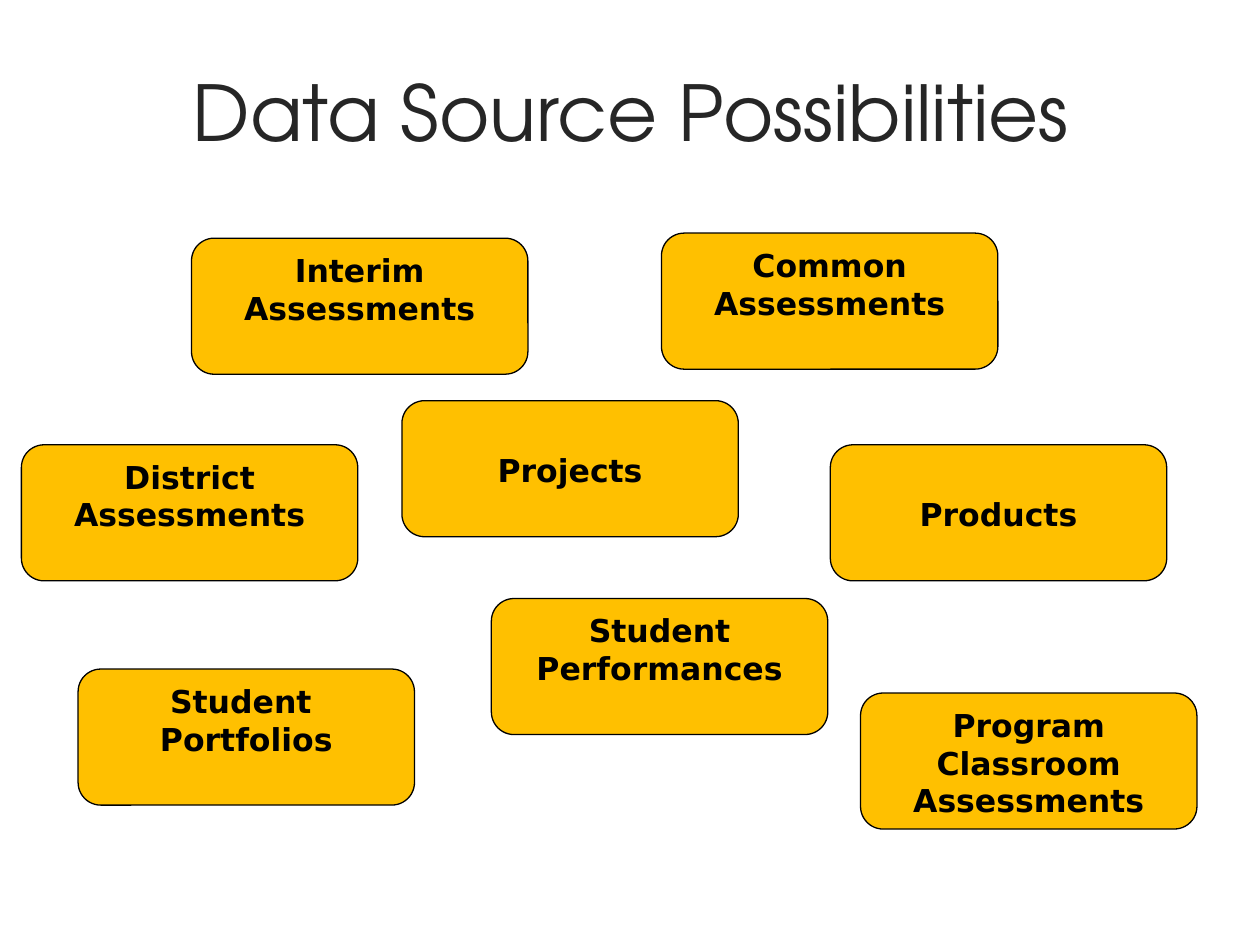
from pptx import Presentation
from pptx.dml.color import RGBColor
from pptx.enum.shapes import MSO_SHAPE
from pptx.enum.text import MSO_ANCHOR, PP_ALIGN
from pptx.util import Inches, Pt

CARD_WIDTH, CARD_HEIGHT = 2.67, 1.08
TOP_INSET, LOWERED_INSET = 0.05, 0.35

# Label, left, top, top inset
DATA_SOURCES = [
    ("Interim Assessments", 1.52, 1.89, TOP_INSET),
    ("Program Classroom Assessments", 6.83, 5.5, TOP_INSET),
    ("Projects", 3.19, 3.18, LOWERED_INSET),
    ("Products", 6.59, 3.53, LOWERED_INSET),
    ("Student \nPortfolios", 0.62, 5.31, TOP_INSET),
    ("Student Performances", 3.9, 4.75, TOP_INSET),
    ("Common Assessments", 5.25, 1.85, TOP_INSET),
    ("District\vAssessments", 0.17, 3.53, TOP_INSET),
]


def color(hex_value):
    return RGBColor.from_string(hex_value)


def write_centered(frame, text, font_name, size, hex_value, bold=False):
    frame.word_wrap = True
    frame.text = text
    for paragraph in frame.paragraphs:
        paragraph.alignment = PP_ALIGN.CENTER
        font = paragraph.font
        font.name, font.size, font.bold = font_name, Pt(size), bold
        font.color.rgb = color(hex_value)


def add_heading(slide, text, left, top, width, height):
    heading = slide.shapes.add_textbox(
        Inches(left), Inches(top), Inches(width), Inches(height))
    heading.text_frame.vertical_anchor = MSO_ANCHOR.MIDDLE
    write_centered(heading.text_frame, text, "TeX Gyre Adventor", 44, "262626")


def add_source_card(slide, label, left, top, inset):
    card = slide.shapes.add_shape(
        MSO_SHAPE.ROUNDED_RECTANGLE, Inches(left), Inches(top),
        Inches(CARD_WIDTH), Inches(CARD_HEIGHT))
    card.shadow.inherit = False
    card.fill.solid()
    card.fill.fore_color.rgb = color("FFC000")
    card.line.color.rgb = color("000000")
    card.line.width = Pt(0.75)
    card.text_frame.vertical_anchor = MSO_ANCHOR.TOP
    card.text_frame.margin_top = Inches(inset)
    write_centered(card.text_frame, label, "DejaVu Sans", 18, "000000", bold=True)


def main():
    presentation = Presentation()
    presentation.slide_width = Inches(10)
    presentation.slide_height = Inches(7.5)
    slide = presentation.slides.add_slide(presentation.slide_layouts[6])
    add_heading(slide, "Data Source Possibilities", 0.52, 0.25, 8.98, 1.25)
    for label, left, top, inset in DATA_SOURCES:
        add_source_card(slide, label, left, top, inset)
    presentation.save("out.pptx")


if __name__ == "__main__":
    main()
